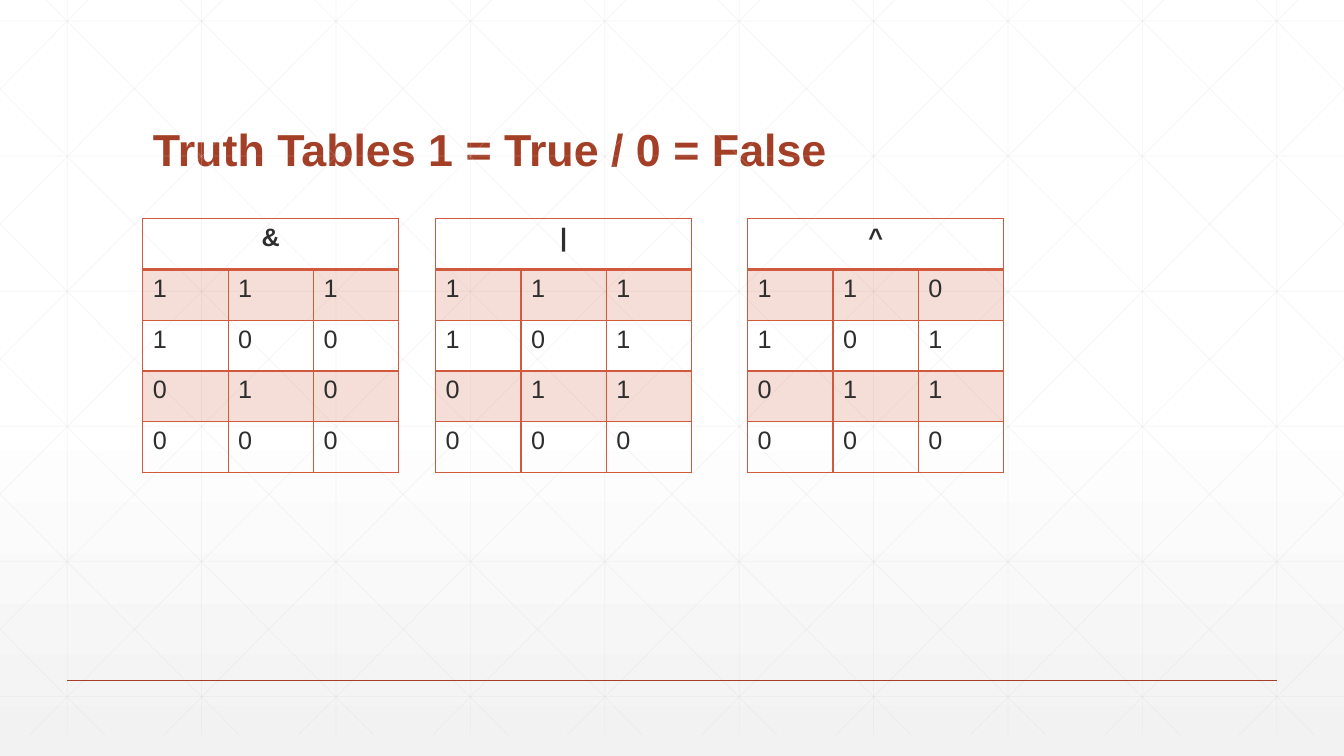
from copy import deepcopy

from lxml.etree import SubElement
from pptx import Presentation
from pptx.dml.color import RGBColor
from pptx.enum.shapes import MSO_CONNECTOR as Connector
from pptx.enum.text import MSO_ANCHOR as Anchor, PP_ALIGN as Align
from pptx.oxml.ns import qn
from pptx.util import Pt

WIDTH, HEIGHT = 960, 540
COLORS = {
    "page": "FFFFFF",
    "shade": "F2F2F2",
    "grid": "D9D9D9",
    "title": "A43F27",
    "accent": "D15A3E",
    "text": "2D2E2D",
}
TITLE_FONT = {"name": "Arial", "size": Pt(32), "bold": True}
HEADER_FONT = {"name": "Arial", "size": Pt(18), "bold": True}
BODY_FONT = {**HEADER_FONT, "bold": False}

GRID_TOP, GRID_BOTTOM = -15, 525
GRID_STEP = 96
DIAGONAL_RUN = 537

TABLE_TOP, TABLE_WIDTH, TABLE_HEIGHT = 156.24, 183, 181.4
INPUTS = ["11", "10", "01", "00"]
TRUTH_TABLES = [  # operator, left edge, result for each pair of inputs
    ("&", 102, "1000"),
    ("|", 311.2, "1110"),
    ("^", 534, "0110"),
]


def rgb(name):
    return RGBColor.from_string(COLORS[name])


def add_alpha(element, percent):
    """Make the solid colour inside the element partly transparent."""
    color = element.find(".//" + qn("a:srgbClr"))
    SubElement(color, qn("a:alpha"), val=str(percent * 1000))


class SlideBuilder:
    def __init__(self, deck):
        self.page = deck.slides.add_slide(deck.slide_layouts[5])

    def background(self):
        fill = self.page.background.fill
        fill.gradient()
        fill.gradient_angle = 270
        first = self.page.element.find(".//" + qn("a:gs"))
        first.addnext(deepcopy(first))
        stops = [(0, "page"), (0.53, "page"), (1, "shade")]
        for stop, (position, color) in zip(fill.gradient_stops, stops):
            stop.position = position
            stop.color.rgb = rgb(color)

    def format_text(self, para, text, style, color):
        span = para.add_run()
        span.text = text
        for name, value in style.items():
            setattr(span.font, name, value)
        span.font.color.rgb = rgb(color)

    def title(self, text, left, top, width, height):
        box = self.page.shapes.title
        place = {"left": left, "top": top, "width": width, "height": height}
        for name, value in place.items():
            setattr(box, name, Pt(value))
        box.text_frame.word_wrap = True
        box.text_frame.vertical_anchor = Anchor.BOTTOM
        para = box.text_frame.paragraphs[0]
        para.alignment = Align.LEFT
        para.line_spacing = 0.9
        self.format_text(para, text, TITLE_FONT, "title")

    def line(self, shapes, start, end, color, weight, opacity=100):
        line = shapes.add_connector(
            Connector.STRAIGHT, *(Pt(length) for length in (*start, *end)))
        line.line.width = Pt(weight)
        line.line.color.rgb = rgb(color)
        properties = line.element.spPr
        if opacity < 100:
            add_alpha(properties, opacity)
        SubElement(properties, qn("a:effectLst"))

    def grid(self):
        """Draw the faint lattice of upright, level and diagonal lines."""
        lines = [((x, GRID_TOP), (x, GRID_BOTTOM))
                 for x in range(48, WIDTH, GRID_STEP)]
        for row in range(6):
            y = 15 + 96.5 * row
            lines.append(((0, y), (WIDTH, y)))
        slope = (GRID_BOTTOM - GRID_TOP) / DIAGONAL_RUN
        for step in range(-5, 10):
            origin = 18 + GRID_STEP * step
            left, right = max(0, origin), min(WIDTH, origin + DIAGONAL_RUN)
            top, bottom = (round(GRID_TOP + (x - origin) * slope, 2)
                           for x in (left, right))
            lines.append(((left, top), (right, bottom)))
            lines.append(((WIDTH - left, top), (WIDTH - right, bottom)))
        shapes = self.page.shapes.add_group_shape().shapes
        for start, end in lines:
            self.line(shapes, start, end, "grid", 0.5, opacity=25)

    def borders(self, cell, row):
        properties = cell._tc.get_or_add_tcPr()
        weights = {"L": 1, "R": 1, "T": 2 if row == 1 else 1,
                   "B": 2 if row == 0 else 1}
        for side, weight in weights.items():
            edge = SubElement(properties, qn(f"a:ln{side}"), w=str(Pt(weight)))
            fill = SubElement(edge, qn("a:solidFill"))
            SubElement(fill, qn("a:srgbClr"), val=COLORS["accent"])

    def shade(self, cell, banded):
        if banded:
            cell.fill.solid()
            cell.fill.fore_color.rgb = rgb("accent")
            add_alpha(cell._tc.tcPr.find(qn("a:solidFill")), 20)
        else:
            cell.fill.background()

    def truth_table(self, operator, left, results):
        rows = [inputs + result for inputs, result in zip(INPUTS, results)]
        table = self.page.shapes.add_table(
            len(rows) + 1, 3, Pt(left), Pt(TABLE_TOP),
            Pt(TABLE_WIDTH), Pt(TABLE_HEIGHT)).table
        table.first_row = table.horz_banding = False
        for row in range(len(rows) + 1):
            for column in range(3):
                cell = table.cell(row, column)
                self.borders(cell, row)
                self.shade(cell, banded=row % 2 == 1)
                if row:
                    self.format_text(cell.text_frame.paragraphs[0],
                                     rows[row - 1][column], BODY_FONT, "text")
        header = table.cell(0, 0)
        header.merge(table.cell(0, 2))
        para = header.text_frame.paragraphs[0]
        para.alignment = Align.CENTER
        self.format_text(para, operator, HEADER_FONT, "text")


def main():
    deck = Presentation()
    deck.slide_width, deck.slide_height = Pt(WIDTH), Pt(HEIGHT)
    builder = SlideBuilder(deck)
    builder.background()
    builder.grid()
    builder.line(builder.page.shapes, (48, 486), (912, 486), "title", 1)
    builder.title("Truth Tables 1 = True / 0 = False", 102, 39.6, 756, 90)
    for operator, left, results in TRUTH_TABLES:
        builder.truth_table(operator, left, results)
    deck.save("out.pptx")


if __name__ == "__main__":
    main()
